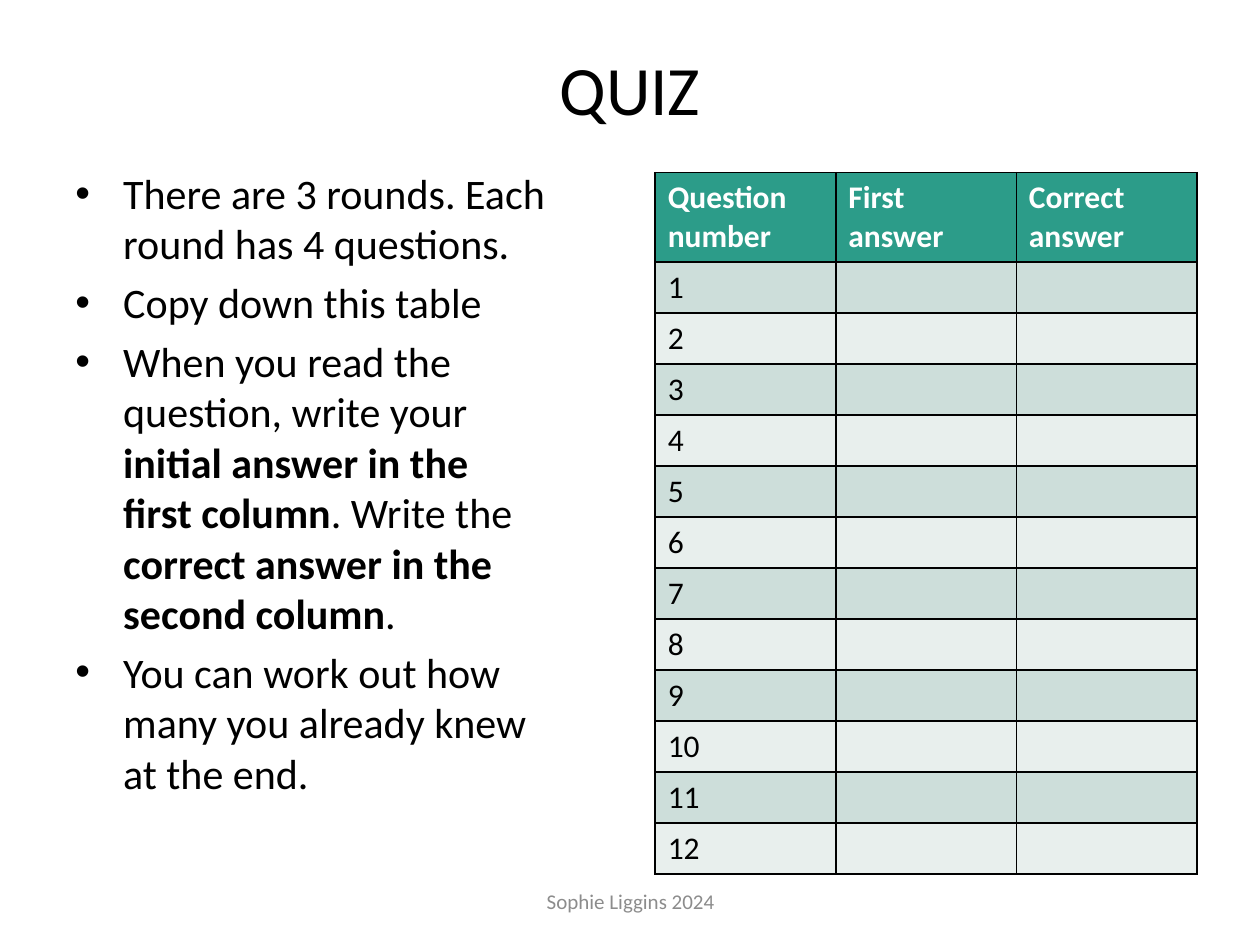
from lxml import etree
from pptx import Presentation
from pptx import util as u
from pptx.dml.color import RGBColor
from pptx.enum import text
from pptx.oxml import ns

BLACK = RGBColor(0x00, 0x00, 0x00)
WHITE = RGBColor(0xFF, 0xFF, 0xFF)
GREY = RGBColor(0x8C, 0x8C, 0x8C)
GREEN = RGBColor(0x2C, 0x9C, 0x89)
BAND_DARK = RGBColor(0xCD, 0xDE, 0xDA)
BAND_LIGHT = RGBColor(0xE8, 0xEF, 0xED)

INSTRUCTIONS = [
    [("There are 3 rounds. Each round has 4 questions.", False)],
    [("Copy down this table", False)],
    [
        ("When you read the question, write your ", False),
        ("initial answer in the first column", True),
        (". Write the ", False),
        ("correct answer in the second column", True),
        (".", False),
    ],
    [("You can work out how many you already knew at the end.", False)],
]
HEADINGS = ["Question number", "First answer", "Correct answer"]
QUESTION_COUNT = 12


class SlideBuilder:
    font_name = "Calibri"

    def __init__(self, slide):
        self.slide = slide

    def style(self, font, size, color=BLACK, bold=None):
        font.name = self.font_name
        font.size = u.Pt(size)
        font.color.rgb = color
        font.bold = bold

    def place(self, shape, left, top, width, height):
        shape.left, shape.top = u.Inches(left), u.Inches(top)
        shape.width, shape.height = u.Inches(width), u.Inches(height)

    def centred_line(self, shape, words, size, color=BLACK):
        frame = shape.text_frame
        frame.word_wrap = True
        frame.vertical_anchor = text.MSO_ANCHOR.MIDDLE
        paragraph = frame.paragraphs[0]
        paragraph.text = words
        paragraph.alignment = text.PP_ALIGN.CENTER
        self.style(paragraph.font, size, color)

    def title(self, words, box, size):
        shape = self.slide.shapes.title
        self.place(shape, *box)
        self.centred_line(shape, words, size)

    def text_box(self, box):
        return self.slide.shapes.add_textbox(*map(u.Inches, box))

    def caption(self, words, box, size, color):
        self.centred_line(self.text_box(box), words, size, color)

    def bullets(self, items, box, size):
        frame = self.text_box(box).text_frame
        frame.word_wrap = True
        for index, item in enumerate(items):
            paragraph = frame.add_paragraph() if index else frame.paragraphs[0]
            self.style(paragraph.font, size)
            paragraph.space_before = u.Pt(size * 0.2)
            properties = paragraph._p.get_or_add_pPr()
            indent = u.Inches(0.38)
            properties.set("marL", str(indent))
            properties.set("indent", str(-indent))
            bullet_font = etree.Element(ns.qn("a:buFont"), typeface="Arial")
            bullet = etree.Element(ns.qn("a:buChar"), char="•")
            position = properties.index(properties.find(ns.qn("a:defRPr")))
            properties[position:position] = [bullet_font, bullet]
            for words, bold in item:
                run = paragraph.add_run()
                run.text = words
                if bold:
                    run.font.bold = True

    def cell_borders(self, cell):
        properties = cell._tc.get_or_add_tcPr()
        for side in ("lnL", "lnR", "lnT", "lnB"):
            line = etree.SubElement(properties, ns.qn(f"a:{side}"), w=str(u.Pt(1)))
            fill = etree.SubElement(line, ns.qn("a:solidFill"))
            etree.SubElement(fill, ns.qn("a:srgbClr"), val=str(BLACK))

    def table(self, rows, box, header_height, size):
        frame = self.slide.shapes.add_table(
            len(rows), len(rows[0]), *map(u.Inches, box)
        )
        table = frame.table
        body_height = (box[3] - header_height) / (len(rows) - 1)
        for row_index, values in enumerate(rows):
            header = row_index == 0
            height = header_height if header else body_height
            table.rows[row_index].height = u.Inches(height)
            band = BAND_DARK if row_index % 2 else BAND_LIGHT
            for column_index, value in enumerate(values):
                cell = table.cell(row_index, column_index)
                self.cell_borders(cell)
                cell.fill.solid()
                cell.fill.fore_color.rgb = GREEN if header else band
                cell.text = value
                font = cell.text_frame.paragraphs[0].font
                self.style(font, size, WHITE if header else BLACK, header)


def main():
    presentation = Presentation()
    presentation.slide_width = u.Inches(10)
    presentation.slide_height = u.Inches(7.5)
    slide = presentation.slides.add_slide(presentation.slide_layouts[5])
    builder = SlideBuilder(slide)

    builder.title("QUIZ", (0.5, 0.3, 9, 0.79), 39.6)
    builder.bullets(INSTRUCTIONS, (0.5, 1.28, 3.93, 5.58), 24)
    answers = [[str(number), "", ""] for number in range(1, QUESTION_COUNT + 1)]
    builder.table([HEADINGS] + answers, (5.2, 1.37, 4.3, 5.57), 0.71, 18)
    builder.caption("Sophie Liggins 2024", (3.42, 6.95, 3.17, 0.4), 12, GREY)

    presentation.save("out.pptx")


if __name__ == "__main__":
    main()
